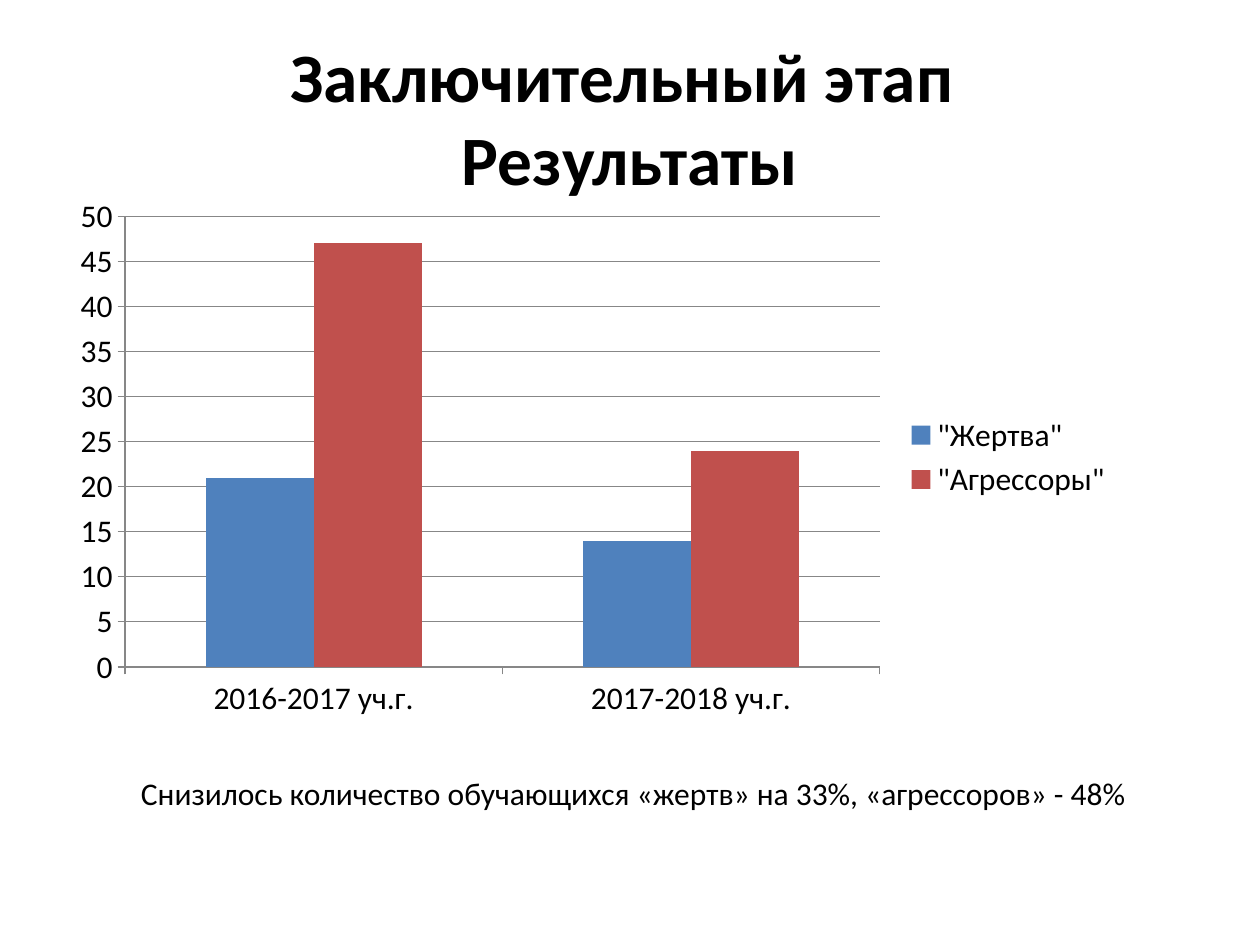
from pptx import Presentation
from pptx import util as u
from pptx.chart.data import CategoryChartData
from pptx.dml.color import RGBColor
from pptx.enum import chart as ch, text

FONT = "Calibri"
COLORS = {"text": "000000", "victims": "4F81BD", "aggressors": "C0504D", "axis": "878787"}


def color(name):
    return RGBColor.from_string(COLORS[name])


def style_font(font, size, bold=False):
    font.name, font.size, font.bold = FONT, u.Pt(size), bold
    font.color.rgb = color("text")


def add_text(slide, content, box, size, bold=False,
             align=text.PP_ALIGN.LEFT, anchor=text.MSO_ANCHOR.TOP):
    frame = slide.shapes.add_textbox(*map(u.Inches, box)).text_frame
    frame.word_wrap = True
    frame.vertical_anchor = anchor
    paragraph = frame.paragraphs[0]
    paragraph.text = content
    paragraph.alignment = align
    for run in paragraph.runs:
        style_font(run.font, size, bold)


def style_axis(axis):
    axis.major_tick_mark = ch.XL_TICK_MARK.OUTSIDE
    axis.minor_tick_mark = ch.XL_TICK_MARK.NONE
    axis.format.line.color.rgb = color("axis")
    axis.format.line.width = u.Pt(0.75)


def add_results_chart(slide, box):
    results = CategoryChartData()
    results.categories = ["2016-2017 уч.г.", "2017-2018 уч.г."]
    results.add_series('"Жертва"', (21, 14))
    results.add_series('"Агрессоры" ', (47, 24))
    chart = slide.shapes.add_chart(
        ch.XL_CHART_TYPE.COLUMN_CLUSTERED, *map(u.Inches, box), results).chart
    style_font(chart.font, 18)
    chart.has_title = False
    chart.has_legend = True
    chart.legend.position = ch.XL_LEGEND_POSITION.RIGHT
    chart.legend.include_in_layout = False

    style_axis(chart.category_axis)
    values = chart.value_axis
    style_axis(values)
    values.minimum_scale, values.maximum_scale, values.major_unit = 0, 50, 5
    values.has_major_gridlines = True
    gridline = values.major_gridlines.format.line
    gridline.color.rgb = color("axis")
    gridline.width = u.Pt(0.75)

    plot = chart.plots[0]
    plot.gap_width, plot.overlap = 150, 0
    plot.vary_by_categories = False
    for series, name in zip(plot.series, ("victims", "aggressors")):
        series.format.fill.solid()
        series.format.fill.fore_color.rgb = color(name)


def main():
    deck = Presentation()
    deck.slide_width, deck.slide_height = u.Inches(10), u.Inches(7.5)
    slide = deck.slides.add_slide(deck.slide_layouts[6])
    add_text(slide, "Заключительный этап \vРезультаты", (0.5, 0.3, 9, 1.25), 39.6,
             bold=True, align=text.PP_ALIGN.CENTER, anchor=text.MSO_ANCHOR.MIDDLE)
    add_results_chart(slide, (0.47, 1.48, 8.52, 4.3))
    add_text(slide, "Снизилось количество обучающихся «жертв» на 33%, «агрессоров» - 48%",
             (1.02, 6.09, 8.05, 0.4), 18)
    deck.save("out.pptx")


if __name__ == "__main__":
    main()
